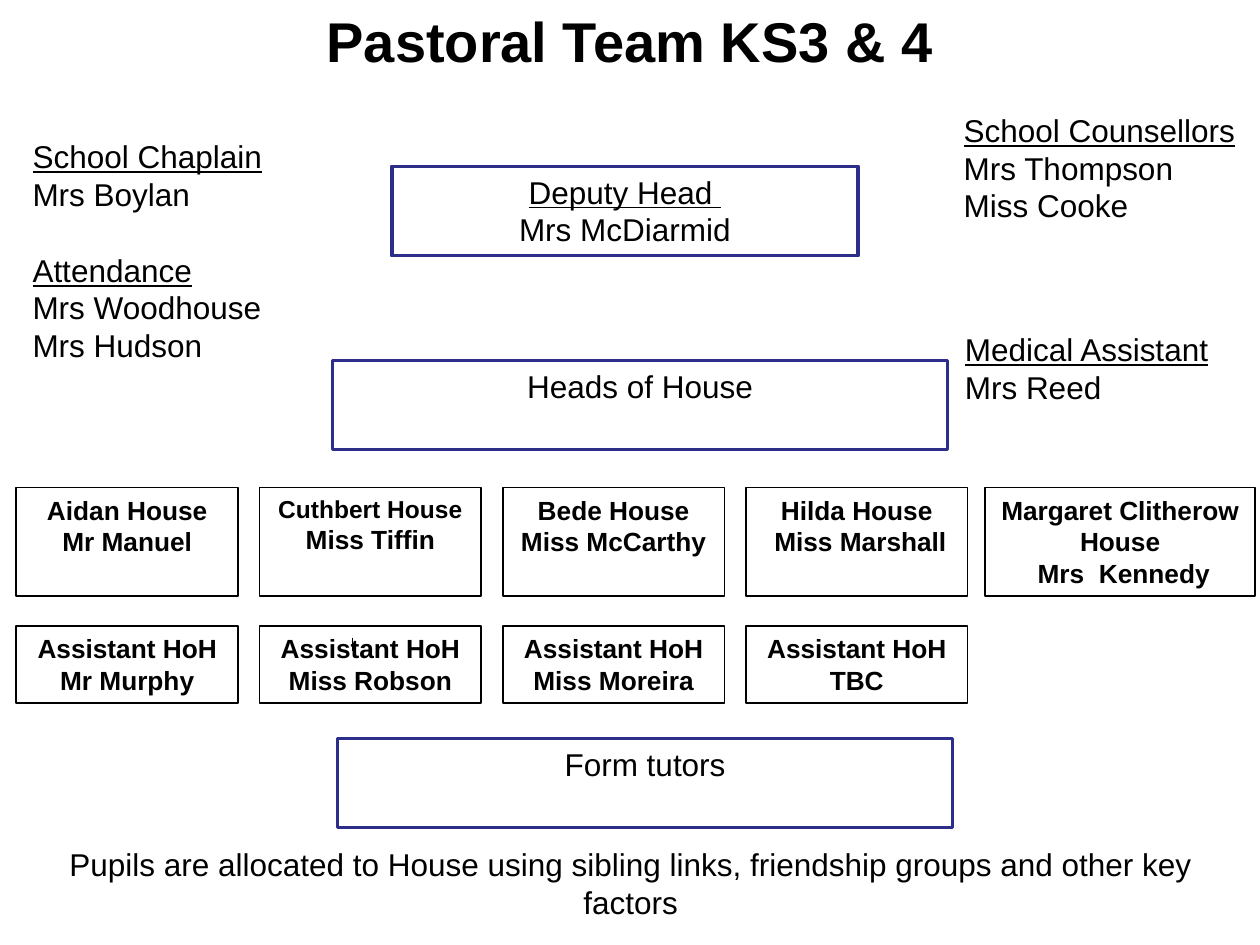
from pptx import Presentation
from pptx.dml.color import RGBColor
from pptx.enum.shapes import MSO_CONNECTOR, MSO_SHAPE
from pptx.enum.text import MSO_ANCHOR, MSO_AUTO_SIZE, PP_ALIGN
from pptx.oxml.ns import qn
from pptx.util import Inches, Pt
from lxml.etree import SubElement

COLORS = {"text": "000000", "paper": "FFFFFF", "role": "2D2D8A", "house": "000000"}
FONT = "Arial"
LINE_RATIO = 1.2
HOUSE_LEFT, HOUSE_STEP, HOUSE_WIDTH = 0.13, 1.93, 1.76
HOUSE_TOP, HOUSE_HEIGHT = 3.87, 0.86
ASSISTANT_TOP, ASSISTANT_HEIGHT = 4.97, 0.61

ROLES = [
    (3.11, 1.32, 3.7, [("Deputy Head ", True), ("Mrs McDiarmid", False)]),
    (2.64, 2.86, 4.88, [("Heads of House", False)]),
    (2.68, 5.86, 4.88, [("Form tutors", False)]),
]
STAFF = [
    (0.16, 1.04, 2.28, 2.52, [
        ("School Chaplain", ["Mrs Boylan"]),
        ("Attendance", ["Mrs Woodhouse", "Mrs Hudson"]),
    ]),
    (7.55, 0.83, 2.68, 1.01, [("School Counsellors", ["Mrs Thompson", "Miss Cooke"])]),
    (7.56, 2.57, 2.76, 1.01, [("Medical Assistant", ["Mrs Reed"])]),
]
HOUSES = [
    ("Aidan House", "Mr Manuel", 15, "Mr Murphy"),
    ("Cuthbert House", "Miss Tiffin", 14, "Miss Robson"),
    ("Bede House", "Miss McCarthy", 15, "Miss Moreira"),
    ("Hilda House", " Miss Marshall", 15, "TBC"),
    ("Margaret Clitherow House", " Mrs  Kennedy", 15, None),
]


def color(name):
    """Return the named colour."""
    return RGBColor.from_string(COLORS[name])


def prepare_frame(shape):
    """Make the text of a shape wrap from its top edge."""
    frame = shape.text_frame
    frame.word_wrap = True
    frame.auto_size = MSO_AUTO_SIZE.NONE
    frame.vertical_anchor = MSO_ANCHOR.TOP
    return frame


def add_line(frame, text, size, align, bold=False, underline=False):
    """Write one paragraph, using the empty first one if it is free."""
    first = frame.paragraphs[0]
    paragraph = frame.add_paragraph() if first.runs else first
    paragraph.alignment = align
    paragraph.line_spacing = Pt(size * LINE_RATIO)
    paragraph.space_before = paragraph.space_after = Pt(0)
    run = paragraph.add_run()
    run.text = text
    run.font.name = FONT
    run.font.size = Pt(size)
    run.font.bold = bold
    run.font.underline = underline
    run.font.color.rgb = color("text")
    return paragraph


def add_text_box(slide, left, top, width, height):
    """Add a wrapping text box and return its text frame."""
    box = slide.shapes.add_textbox(Inches(left), Inches(top), Inches(width), Inches(height))
    return prepare_frame(box)


def add_box(slide, left, top, width, height, line, line_width, filled=False):
    """Add an outlined rectangle and return its text frame."""
    box = slide.shapes.add_shape(
        MSO_SHAPE.RECTANGLE, Inches(left), Inches(top), Inches(width), Inches(height))
    box.shadow.inherit = False
    if filled:
        box.fill.solid()
        box.fill.fore_color.rgb = color("paper")
    else:
        box.fill.background()
    box.line.color.rgb = color(line)
    box.line.width = Pt(line_width)
    return prepare_frame(box)


def add_title(slide, text):
    """Place the slide title across the top."""
    title = slide.shapes.title
    title.left, title.top = Inches(0), Inches(0)
    title.width, title.height = Inches(10), Inches(0.63)
    add_line(prepare_frame(title), text, 32, PP_ALIGN.CENTER, bold=True)


def add_role(slide, left, top, width, lines):
    """Add a blue-edged box for one level of the team."""
    frame = add_box(slide, left, top, width, 0.71, "role", 2, filled=True)
    for text, underline in lines:
        add_line(frame, text, 18, PP_ALIGN.CENTER, underline=underline)


def add_staff(slide, left, top, width, height, groups):
    """Add underlined headings, each followed by its names."""
    frame = add_text_box(slide, left, top, width, height)
    for index, (heading, names) in enumerate(groups):
        paragraph = add_line(frame, heading, 18, PP_ALIGN.LEFT, underline=True)
        if index:
            paragraph.space_before = Pt(18 * LINE_RATIO)
        for name in names:
            add_line(frame, name, 18, PP_ALIGN.LEFT)


def add_house_box(slide, left, top, width, height, lines):
    """Add a black-edged box with bold centred lines."""
    frame = add_box(slide, left, top, width, height, "house", 1)
    for text, size in lines:
        add_line(frame, text, size, PP_ALIGN.CENTER, bold=True)


def add_houses(slide):
    """Lay out the heads of house with their assistants below."""
    for index, (house, head, size, assistant) in enumerate(HOUSES):
        left = HOUSE_LEFT + index * HOUSE_STEP
        if assistant:
            width = HOUSE_WIDTH
            add_house_box(slide, left, ASSISTANT_TOP, width, ASSISTANT_HEIGHT,
                          [("Assistant HoH", 15), (assistant, 15)])
        else:
            left, width = 7.82, 2.14
        add_house_box(slide, left, HOUSE_TOP, width, HOUSE_HEIGHT,
                      [(house, size), (head, 15)])


def add_tick(slide, x, top, bottom):
    """Draw a short vertical line."""
    tick = slide.shapes.add_connector(
        MSO_CONNECTOR.STRAIGHT, Inches(x), Inches(top), Inches(x), Inches(bottom))
    tick.line.color.rgb = color("house")
    tick.line.width = Pt(0.75)
    SubElement(tick._element.spPr, qn("a:effectLst"))


def main():
    """Build and save the pastoral team slide."""
    presentation = Presentation()
    presentation.slide_width, presentation.slide_height = Inches(10), Inches(7.5)
    slide = presentation.slides.add_slide(presentation.slide_layouts[5])
    add_title(slide, "Pastoral Team KS3 & 4")
    for role in ROLES:
        add_role(slide, *role)
    for staff in STAFF:
        add_staff(slide, *staff)
    add_tick(slide, 2.8, 5.06, 5.17)
    add_houses(slide)
    note = add_text_box(slide, 0.3, 6.66, 9.41, 0.71)
    add_line(note, "Pupils are allocated to House using sibling links, "
             "friendship groups and other key factors", 18, PP_ALIGN.CENTER)
    presentation.save("out.pptx")


if __name__ == "__main__":
    main()
